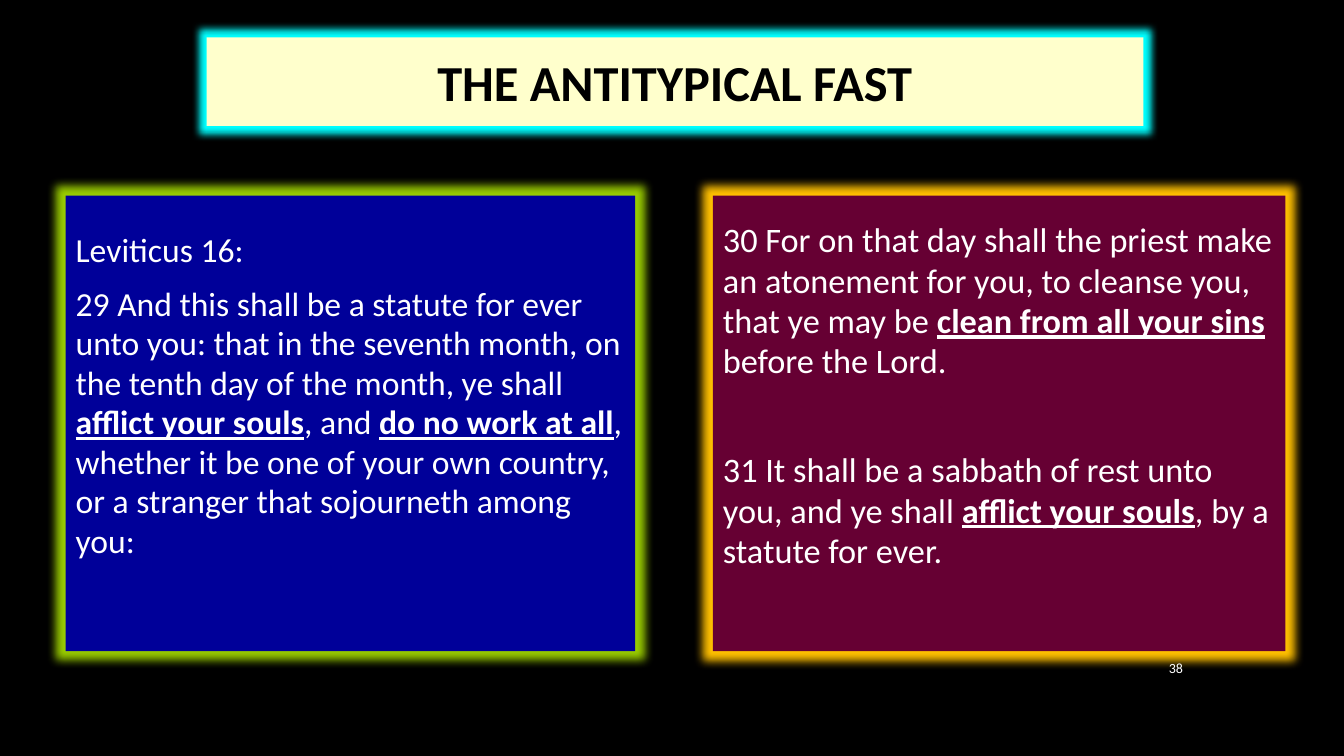
from lxml.etree import SubElement
from pptx import Presentation
from pptx.dml.color import RGBColor
from pptx.enum.text import MSO_ANCHOR as Anchor, MSO_AUTO_SIZE as AutoSize, PP_ALIGN as Align
from pptx.oxml.ns import qn
from pptx.util import Inches, Pt


def color(hex_value):
    return RGBColor.from_string(hex_value)


class FastSlide:
    """Style and current slide; boxes are (left, top, width, height) in percent."""
    font = "Calibri"
    light = "FFFFFF"
    dark = "000000"

    def __init__(self, deck):
        self.width, self.height = deck.slide_width, deck.slide_height
        self.slide = deck.slides.add_slide(deck.slide_layouts.get_by_name("Two Content"))
        background = self.slide.background.fill
        background.solid()
        background.fore_color.rgb = color(self.dark)

    def area(self, box):
        sides = (self.width, self.height) * 2
        return [round(share * side / 100) for share, side in zip(box, sides)]

    def style(self, paragraph, size, ink, align=Align.LEFT):
        paragraph.alignment = align
        font = paragraph.font
        font.name, font.size = self.font, Pt(size)
        font.color.rgb = color(ink)

    def framed(self, index, box, fill, glow, radius):
        """Place a placeholder as a filled panel with a glowing edge."""
        panel = self.slide.placeholders[index]
        panel.left, panel.top, panel.width, panel.height = self.area(box)
        panel.fill.solid()
        panel.fill.fore_color.rgb = color(fill)
        effects = SubElement(panel._element.spPr, qn("a:effectLst"))
        halo = SubElement(effects, qn("a:glow"), rad=str(Pt(radius)))
        SubElement(halo, qn("a:srgbClr"), val=glow)
        frame = panel.text_frame
        frame.word_wrap, frame.auto_size = True, AutoSize.NONE
        frame.vertical_anchor = Anchor.MIDDLE
        return frame

    def title(self, text, box, fill, glow):
        frame = self.framed(0, box, fill, glow, radius=11)
        frame.text = text
        heading = frame.paragraphs[0]
        self.style(heading, 36, self.dark, Align.CENTER)
        heading.font.bold = True

    def passage(self, index, verses, box, fill, glow, size, gap):
        """Fill a body panel; every second part of a verse is emphasised."""
        frame = self.framed(index, box, fill, glow, radius=13)
        frame.margin_bottom = Inches(0.59)
        for number, verse in enumerate(verses):
            paragraph = frame.paragraphs[0] if number == 0 else frame.add_paragraph()
            self.style(paragraph, size, self.light)
            paragraph.line_spacing = 0.98
            paragraph.space_before, paragraph.space_after = Pt(0), Pt(gap)
            if number == len(verses) - 1:
                paragraph.space_after = Pt(0)
            properties = paragraph._p.get_or_add_pPr()
            properties.set("marL", "0")
            properties.set("indent", "0")
            bullet = properties.makeelement(qn("a:buNone"), {})
            properties.find(qn("a:defRPr")).addprevious(bullet)
            for part, words in enumerate(verse):
                run = paragraph.add_run()
                run.text = words
                if part % 2:
                    run.font.bold = run.font.underline = True

    def page_number(self, text, box):
        frame = self.slide.shapes.add_textbox(*self.area(box)).text_frame
        frame.word_wrap = True
        frame.vertical_anchor = Anchor.MIDDLE
        frame.text = text
        self.style(frame.paragraphs[0], 10, self.light, Align.RIGHT)


def main():
    deck = Presentation()
    deck.slide_width, deck.slide_height = Inches(13.33), Inches(7.5)
    fast = FastSlide(deck)
    fast.title("THE ANTITYPICAL FAST", (15.38, 4.93, 69.69, 11.73), "FFFFCC", "00FFFF")

    statute = [
        ["Leviticus 16:"],
        ["29 And this shall be a statute for ever unto you: that in the seventh month, "
         "on the tenth day of the month, ye shall ",
         "afflict your souls", ", and ", "do no work at all",
         ", whether it be one of your own country, or a stranger that sojourneth among you:"],
    ]
    atonement = [
        ["30 For on that day shall the priest make an atonement for you, to cleanse you, "
         "that ye may be ", "clean from all your sins ", "before the Lord."],
        ["31 It shall be a sabbath of rest unto you, and ye shall ",
         "afflict your souls", ", by a statute for ever."],
    ]
    top, height = 25.87, 60.27
    fast.passage(1, statute, (4.88, top, 42.38, height), "000099", "99CC00", size=24, gap=10)
    fast.passage(2, atonement, (53.04, top, 42.61, height), "660033", "FFC000", size=24.5, gap=49)
    fast.page_number("38", (84.25, 85.6, 4.5, 5.47))
    deck.save("out.pptx")


if __name__ == "__main__":
    main()
